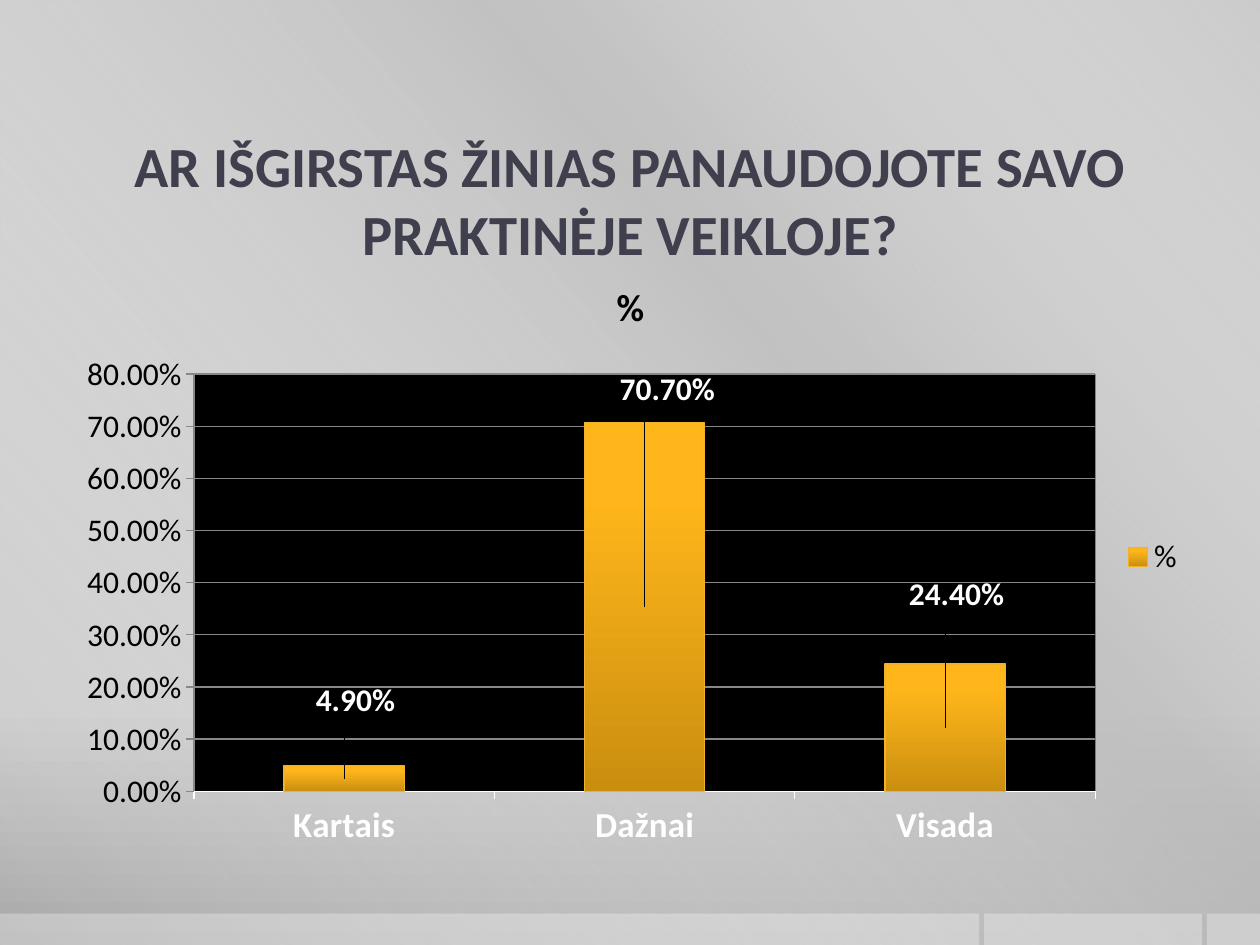
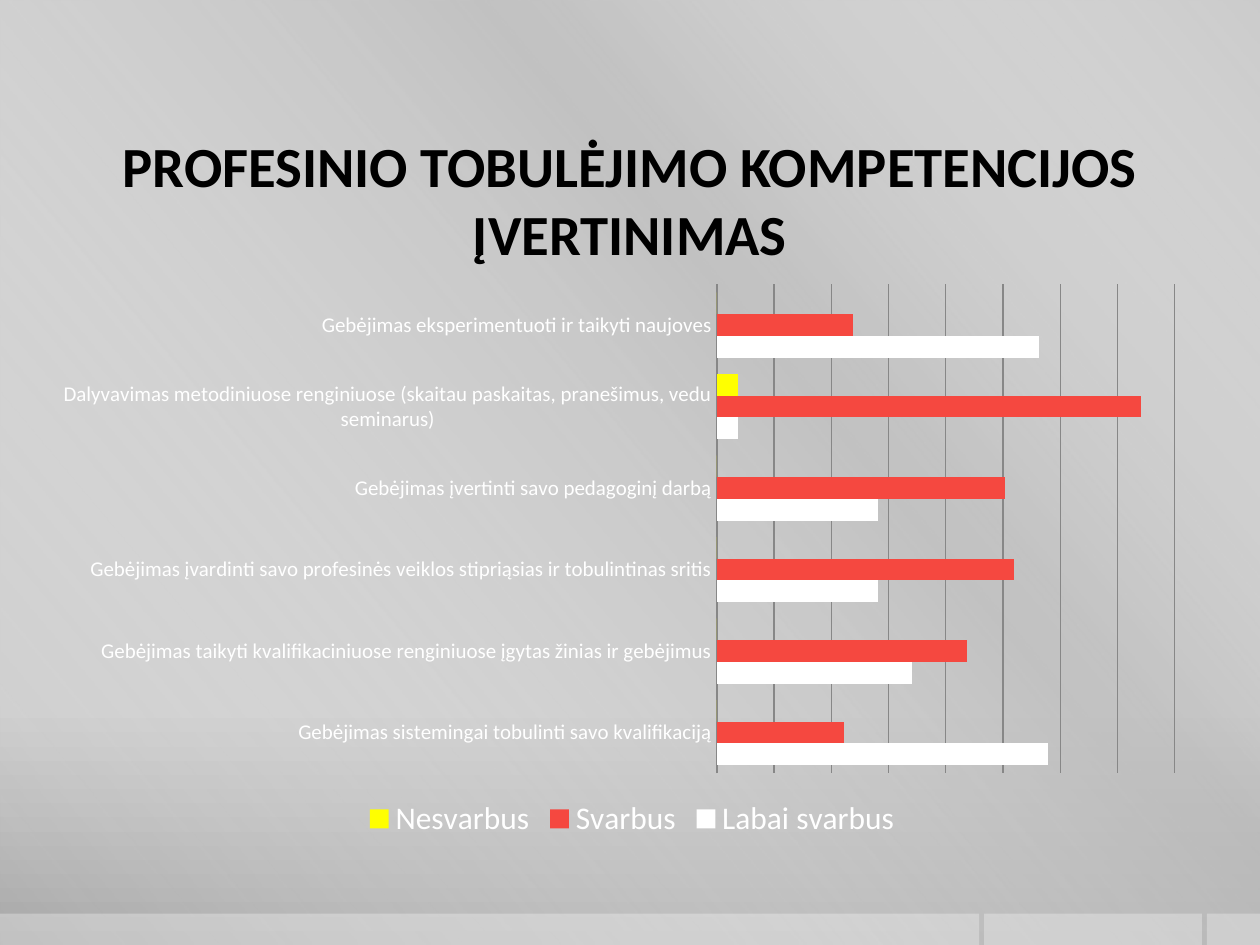
from lxml.etree import SubElement
from pptx import Presentation
from pptx.chart.data import CategoryChartData
from pptx.dml.color import RGBColor
from pptx.enum.chart import XL_CHART_TYPE, XL_LEGEND_POSITION, XL_TICK_LABEL_POSITION, XL_TICK_MARK
from pptx.enum.shapes import MSO_SHAPE
from pptx.enum.text import MSO_ANCHOR, PP_ALIGN
from pptx.oxml import parse_xml
from pptx.oxml.ns import nsdecls, qn
from pptx.util import Cm, Pt

FONT = "Calibri"
HUES = {
    "black": "000000", "white": "FFFFFF", "slate": "3F3F4D", "grid": "878787",
    "red": "F54840", "yellow": "FFFF00", "amber": "F1B22B",
}
PAGE = [(0, "CBCBCB", 100), (76, "C8C8C8", 100), (100, "A7A7A7", 100)]
SHEEN = [(0, "FFFFFF", 0), (34, "BFBFBF", 61), (38, "BFBFBF", 76), (100, "FFFFFF", 0)]
GOLD = [(0, "CA8E0F", 100), (80, "FFB61B", 100), (100, "FFB61C", 100)]
WIDE, HIGH = 25.4, 19.05
BANDS = [(0, 19.74), (19.84, 4.39), (24.33, 1.07)]


def hue(name):
    return RGBColor.from_string(HUES[name])


def blend(holder, stops, angle):
    marks = "".join(
        f'<a:gs pos="{spot * 1000}"><a:srgbClr val="{shade}">'
        f'<a:alpha val="{alpha * 1000}"/></a:srgbClr></a:gs>'
        for spot, shade, alpha in stops
    )
    fill = parse_xml(
        f'<a:gradFill {nsdecls("a")} rotWithShape="1"><a:gsLst>{marks}</a:gsLst>'
        f'<a:lin ang="{angle * 60000}" scaled="0"/></a:gradFill>'
    )
    holder.replace(holder.find(qn("a:solidFill")), fill)


def layout(places, inner=False):
    node = parse_xml(f'<c:layout {nsdecls("c")}/>')
    manual = SubElement(node, qn("c:manualLayout"))
    if inner:
        places = {"layoutTarget": "inner", "xMode": "edge", "yMode": "edge", **places}
    for key, value in places.items():
        SubElement(manual, qn(f"c:{key}")).set("val", str(value))
    return node


def style(font, size, color, bold=False):
    font.name, font.size, font.bold = FONT, Pt(size), bold
    font.color.rgb = hue(color)


def rule(line, color):
    line.color.rgb = hue(color)
    line.width = Pt(0.75)


class Deck:
    def __init__(self):
        self.file = Presentation()
        self.file.slide_width, self.file.slide_height = Cm(WIDE), Cm(HIGH)

    def page(self):
        self.slide = self.file.slides.add_slide(self.file.slide_layouts[6])
        self.slide.background.fill.solid()
        blend(self.slide._element.find(".//" + qn("p:bgPr")), PAGE, 90)
        self.box(0, 0, WIDE, HIGH, SHEEN, 140)
        for left, width in BANDS:
            self.box(left, 18.42, width, 0.63, [(0, "FFFFFF", 30), (100, "FFFFFF", 30)], 0)

    def box(self, left, top, width, height, stops, angle):
        shape = self.slide.shapes.add_shape(
            MSO_SHAPE.RECTANGLE, Cm(left), Cm(top), Cm(width), Cm(height))
        shape.shadow.inherit = False
        shape.line.fill.background()
        shape.fill.solid()
        blend(shape._element.spPr, stops, angle)

    def title(self, text, color):
        frame = self.slide.shapes.add_textbox(
            Cm(1.27), Cm(2.74), Cm(22.86), Cm(2.54)).text_frame
        frame.word_wrap = True
        frame.margin_left = frame.margin_right = 0
        frame.vertical_anchor = MSO_ANCHOR.MIDDLE
        frame.text = text
        frame.paragraphs[0].alignment = PP_ALIGN.CENTER
        style(frame.paragraphs[0].runs[0].font, 32.4, color, True)

    def chart(self, kind, top, height, groups, rows, form, area, gap):
        data = CategoryChartData(number_format=form)
        data.categories = groups
        for name, values in rows:
            data.add_series(name, values)
        chart = self.slide.shapes.add_chart(
            kind, Cm(1.28), Cm(top), Cm(22.86), Cm(height), data).chart
        style(chart.font, 18, "black")
        chart.has_title = False
        plot = chart.plots[0]
        plot.gap_width = gap
        plot.vary_by_categories = False
        field = chart._chartSpace.chart.plotArea
        for old in field.findall(qn("c:layout")):
            field.remove(old)
        field.insert(0, layout(dict(zip("xywh", area)), True))
        for axis in (chart.category_axis, chart.value_axis):
            axis.minor_tick_mark = XL_TICK_MARK.NONE
        chart.category_axis.has_major_gridlines = False
        chart.value_axis.has_major_gridlines = True
        rule(chart.value_axis.major_gridlines.format.line, "grid")
        return chart

    def scale(self, axis, top, step):
        axis.minimum_scale, axis.maximum_scale, axis.major_unit = 0, top, step

    def legend(self, chart, place, color):
        chart.has_legend = True
        chart.legend.position = place
        chart.legend.include_in_layout = False
        style(chart.legend.font, 18, color)

    def label(self, series, shifts):
        tags = series.data_labels
        tags.show_value = True
        tags.number_format, tags.number_format_is_linked = "0.00%", False
        style(tags.font, 18, "white", True)
        for spot, _ in enumerate(shifts):
            style(series.points[spot].data_label.font, 18, "white", True)
        for node, (right, down) in zip(series._element.iter(qn("c:dLbl")), shifts):
            node.insert(1, layout({"x": right, "y": down}))


def usage(deck):
    deck.page()
    deck.title("AR IŠGIRSTAS ŽINIAS PANAUDOJOTE SAVO PRAKTINĖJE VEIKLOJE?", "slate")
    chart = deck.chart(
        XL_CHART_TYPE.COLUMN_STACKED, 5.13, 12.19, ["Kartais", "Dažnai", "Visada"],
        [("%", [0.049, 0.707, 0.244])], "0.00%", (0.115, 0.198, 0.795, 0.69), 150)
    chart.has_title = True
    head = chart.chart_title.text_frame
    head.text = "%"
    style(head.paragraphs[0].runs[0].font, 21.6, "black", True)
    chart.plots[0].overlap = 100
    panel = parse_xml(
        f'<c:spPr {nsdecls("c", "a")}><a:solidFill>'
        f'<a:srgbClr val="{HUES["black"]}"/></a:solidFill></c:spPr>')
    chart._chartSpace.chart.plotArea.append(panel)
    names, scale = chart.category_axis, chart.value_axis
    names.major_tick_mark = scale.major_tick_mark = XL_TICK_MARK.OUTSIDE
    style(names.tick_labels.font, 20, "white", True)
    rule(names.format.line, "white")
    rule(scale.format.line, "grid")
    scale.tick_labels.number_format = "0.00%"
    scale.tick_labels.number_format_is_linked = False
    deck.scale(scale, 0.8, 0.1)
    series = chart.plots[0].series[0]
    series.format.fill.solid()
    rule(series.format.line, "amber")
    blend(series._element.spPr, GOLD, 270)
    deck.label(series, [(0.01, -0.13), (0.02, -0.36), (0.01, -0.22)])
    deck.legend(chart, XL_LEGEND_POSITION.RIGHT, "black")


def skills(deck):
    deck.page()
    deck.title("PROFESINIO TOBULĖJIMO KOMPETENCIJOS ĮVERTINIMAS", "black")
    groups = [
        "Gebėjimas sistemingai tobulinti savo kvalifikaciją",
        "Gebėjimas taikyti kvalifikaciniuose renginiuose įgytas žinias ir gebėjimus",
        "Gebėjimas įvardinti savo profesinės veiklos stipriąsias ir tobulintinas sritis",
        "Gebėjimas įvertinti savo pedagoginį darbą",
        "Dalyvavimas metodiniuose renginiuose (skaitau paskaitas, pranešimus, vedu seminarus)",
        "Gebėjimas eksperimentuoti ir taikyti naujoves",
    ]
    rows = [
        ("Labai svarbus", [78, 46, 38, 38, 5, 76]),
        ("Svarbus", [30, 59, 70, 68, 100, 32]),
        ("Nesvarbus", [0, 0, 0, 0, 5, 0]),
    ]
    chart = deck.chart(
        XL_CHART_TYPE.BAR_CLUSTERED, 5.51, 11.51, groups, rows, "General",
        (0.575, 0.019, 0.405, 0.857), 75)
    chart.plots[0].overlap = 0
    names, scale = chart.category_axis, chart.value_axis
    names.major_tick_mark = scale.major_tick_mark = XL_TICK_MARK.NONE
    style(names.tick_labels.font, 12, "white")
    rule(names.format.line, "grid")
    scale.tick_label_position = XL_TICK_LABEL_POSITION.NONE
    scale.format.line.fill.background()
    deck.scale(scale, 108, 13.5)
    for series, color in zip(chart.plots[0].series, ["white", "red", "yellow"]):
        series.format.fill.solid()
        series.format.fill.fore_color.rgb = hue(color)
    deck.legend(chart, XL_LEGEND_POSITION.BOTTOM, "white")


def main():
    deck = Deck()
    usage(deck)
    skills(deck)
    deck.file.save("out.pptx")


if __name__ == "__main__":
    main()
